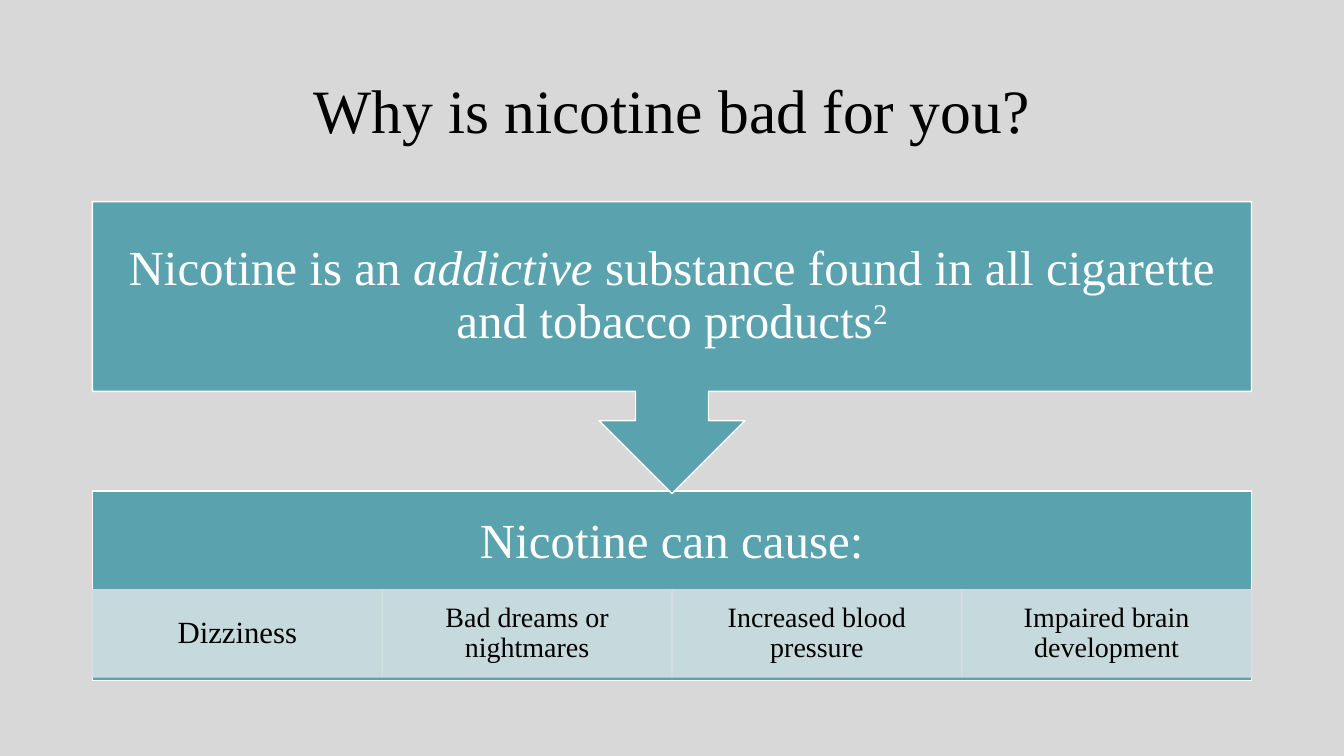
"""Build a slide on why nicotine is harmful, with a callout leading to four effects."""
from lxml import etree
from pptx import Presentation
from pptx import util as u
from pptx.dml.color import RGBColor
from pptx.enum import shapes, text
from pptx.oxml.ns import qn

COLORS = {"background": "D8D8D8", "teal": "5AA2AE", "pale": "D2E0E3",
          "white": "FFFFFF", "black": "000000"}
LEFT, WIDTH = 2.33, 29.21


def color(name):
    return RGBColor.from_string(COLORS[name])


def write(box, spans, size, ink, insets):
    frame = box.text_frame
    sides = dict(zip(("left", "top", "right", "bottom"), insets))
    for side, inset in sides.items():
        setattr(frame, f"margin_{side}", u.Cm(inset))
    frame.word_wrap = True
    frame.vertical_anchor = text.MSO_ANCHOR.MIDDLE
    para = frame.paragraphs[0]
    para.alignment = text.PP_ALIGN.CENTER
    para.line_spacing = 0.9
    for words, extra in spans:
        span = para.add_run()
        span.text = words
        span.font.color.rgb = color(ink)
        font_format = {"name": "Times New Roman", "size": u.Pt(size), **extra}
        for key, value in font_format.items():
            setattr(span.font, key, value)


deck = Presentation()
deck.slide_width, deck.slide_height = u.Cm(33.87), u.Cm(19.05)
page = deck.slides.add_slide(deck.slide_layouts[5])
page.background.fill.solid()
page.background.fill.fore_color.rgb = color("background")

title = page.shapes.title
title.left, title.top, title.width, title.height = map(u.Cm, (LEFT, 1.01, WIDTH, 3.68))
write(title, [("Why is nicotine bad for you?", {})], 44, "black", (0.25, 0.13, 0.25, 0.13))

RECT = shapes.MSO_SHAPE.RECTANGLE
CALLOUT = shapes.MSO_SHAPE.DOWN_ARROW_CALLOUT
effects = [("Dizziness", 22), ("Bad dreams or nightmares", 20),
           ("Increased blood pressure", 20), ("Impaired brain development", 20)]
cell_width = WIDTH / len(effects)
definition = [("Nicotine is an ", {}), ("addictive", {"italic": True}),
              (" substance found in all cigarette and tobacco products", {}), ("2", {})]

panels = [(RECT, (LEFT, 12.37, WIDTH, 4.78), "teal", "white", "white",
           [("Nicotine can cause:", {})], 35, (0.69, 0.69, 0.69, 2.87))]
for column, (effect, size) in enumerate(effects):
    place = (LEFT + column * cell_width, 14.86, cell_width, 2.2)
    panels.append((RECT, place, "pale", "pale", "black",
                   [(effect, {})], size, (0.42, 0.07, 0.42, 0.07)))
panels.append((CALLOUT, (LEFT, 5.08, WIDTH, 7.36), "teal", "white", "white",
               definition, 35, (0.69, 0.69, 0.69, 0.69)))

for kind, place, fill, line, ink, spans, size, insets in panels:
    box = page.shapes.add_shape(kind, *map(u.Cm, place))
    box.shadow.inherit = False
    box.fill.solid()
    box.fill.fore_color.rgb = color(fill)
    box.line.color.rgb = color(line)
    box.line.width = u.Pt(1)
    write(box, spans, size, ink, insets)
    if fill == "pale":
        for paint in box.element.xpath("./p:spPr//a:srgbClr"):
            etree.SubElement(paint, qn("a:alpha")).set("val", "90000")

footnote_mark = box.element.xpath(".//a:rPr")[-1]
footnote_mark.set("baseline", "30000")

deck.save("out.pptx")
